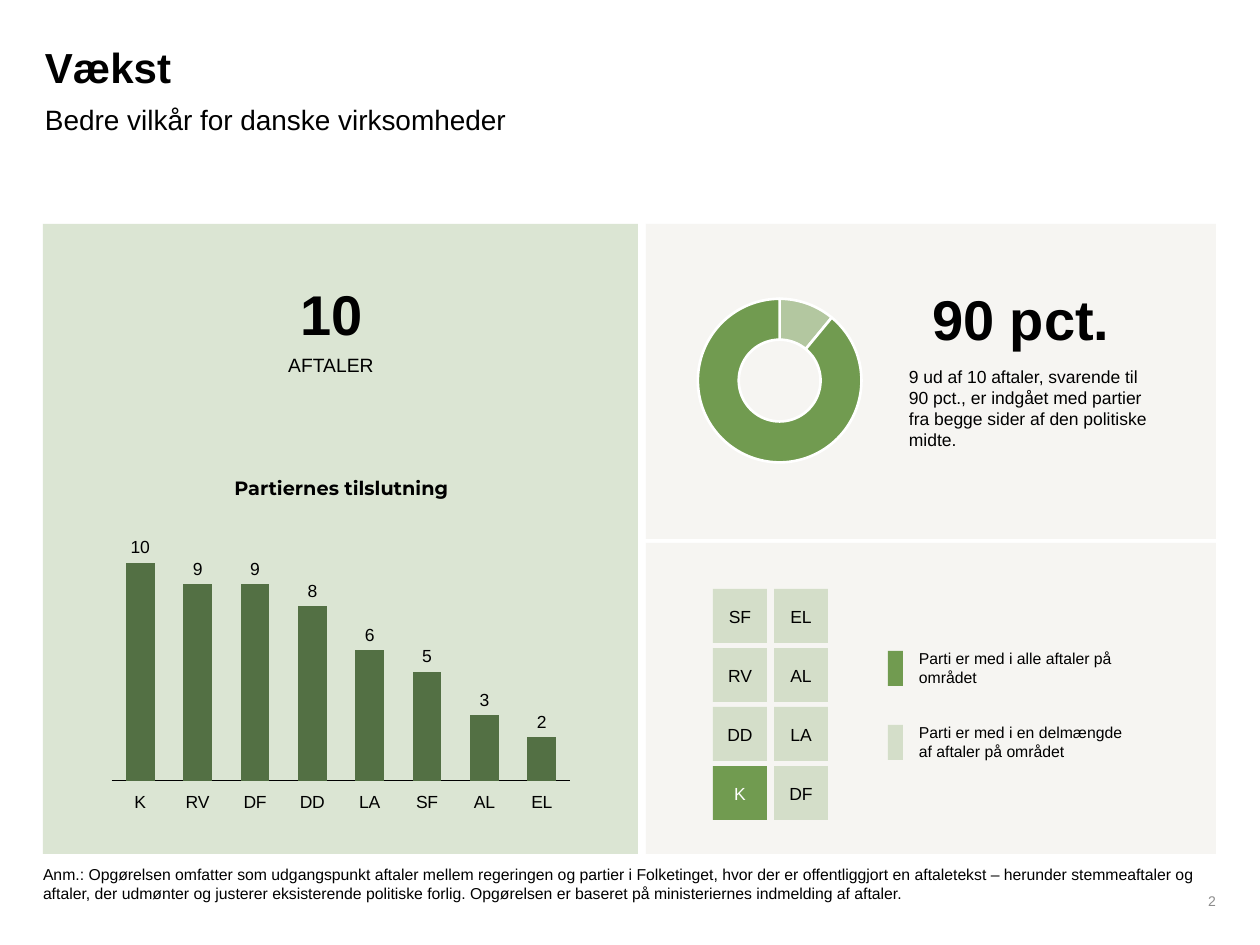
from dataclasses import dataclass
from typing import Optional

from lxml.etree import SubElement
from pptx import Presentation
from pptx.chart.data import CategoryChartData
from pptx.dml.color import RGBColor
from pptx.enum.chart import XL_CHART_TYPE as ChartType, XL_LABEL_POSITION as LabelPosition
from pptx.enum.chart import XL_TICK_LABEL_POSITION as TickLabelPosition, XL_TICK_MARK as TickMark
from pptx.enum.shapes import MSO_SHAPE as ShapeKind
from pptx.enum.text import MSO_ANCHOR as Anchor, PP_ALIGN as Align
from pptx.oxml import parse_xml
from pptx.oxml.ns import nsdecls, qn
from pptx.util import Pt

EMU_PER_PX = 914400 / 126
BLACK, WHITE, GREY = "000000", "FFFFFF", "8C8C8C"
GREEN, DARK_GREEN, SAND = "719B50", "537044", "F6F5F2"
PALE = 25


@dataclass(frozen=True)
class Box:
    left: int
    top: int
    width: int
    height: int

    def emu(self) -> tuple:
        return tuple(round(px * EMU_PER_PX) for px in (self.left, self.top, self.width, self.height))


@dataclass(frozen=True)
class Label:
    box: Box
    lines: tuple
    size: int
    bold: bool = False
    color: str = BLACK
    font: str = "Arial"
    align: Align = Align.LEFT
    anchor: Anchor = Anchor.TOP
    margins: tuple = (0, 0, 0, 0)
    line_spacing: Optional[float] = None


@dataclass(frozen=True)
class Block:
    box: Box
    color: str
    opacity: int = 100


@dataclass(frozen=True)
class Tile:
    party: str
    column: int
    row: int
    in_all: bool = False


def rgb(color: str) -> RGBColor:
    return RGBColor.from_string(color)


def paint(fill, color: str, opacity: int = 100) -> None:
    fill.solid()
    fill.fore_color.rgb = rgb(color)
    if opacity < 100:
        color_element = fill._xPr.find(qn("a:solidFill"))[0]
        SubElement(color_element, qn("a:alpha")).set("val", str(opacity * 1000))


def style_font(font, size: int, color: str = BLACK, name: str = "Arial", bold: bool = False) -> None:
    font.name = name
    font.size = Pt(size)
    font.bold = bold
    font.color.rgb = rgb(color)


def write(shape, label: Label) -> None:
    frame = shape.text_frame
    frame.word_wrap = True
    frame.vertical_anchor = label.anchor
    frame.margin_left, frame.margin_top, frame.margin_right, frame.margin_bottom = (
        round(px * EMU_PER_PX) for px in label.margins
    )
    paragraph = frame.paragraphs[0]
    paragraph.alignment = label.align
    if label.line_spacing:
        paragraph.line_spacing = label.line_spacing
    for index, line in enumerate(label.lines):
        if index:
            paragraph.add_line_break()
        run = paragraph.add_run()
        run.text = line
        style_font(run.font, label.size, label.color, label.font, label.bold)


def draw_label(slide, label: Label) -> None:
    write(slide.shapes.add_textbox(*label.box.emu()), label)


def draw_block(slide, block: Block):
    shape = slide.shapes.add_shape(ShapeKind.RECTANGLE, *block.box.emu())
    shape.shadow.inherit = False
    paint(shape.fill, block.color, block.opacity)
    shape.line.fill.background()
    return shape


def draw_tile(slide, tile: Tile) -> None:
    box = Box(713 + 61 * tile.column, 589 + 59 * tile.row, 54, 54)
    shape = draw_block(slide, Block(box, GREEN, 100 if tile.in_all else PALE))
    color = WHITE if tile.in_all else BLACK
    write(shape, Label(box, (tile.party,), 10, color=color, align=Align.CENTER,
                       anchor=Anchor.MIDDLE, margins=(13, 13, 13, 13)))


def add_chart(slide, kind: ChartType, box: Box, categories: tuple, values: tuple):
    data = CategoryChartData()
    data.categories = categories
    data.add_series("Series 1", values)
    chart = slide.shapes.add_chart(kind, *box.emu(), data).chart
    chart.has_legend = False
    chart.has_title = False
    style_font(chart.font, 10)
    return chart


def draw_share_chart(slide) -> None:
    chart = add_chart(slide, ChartType.DOUGHNUT, Box(683, 260, 186, 239), ("1", "2", "3"), (11, 89, None))
    plot = chart.plots[0]
    plot.has_data_labels = False
    series = plot.series[0]
    for index, opacity in enumerate((50, 100)):
        point = series.points[index].format
        paint(point.fill, GREEN, opacity)
        paint(point.line.fill, WHITE)
        point.line.width = Pt(1.5)
    plot_area = chart._chartSpace.chart.plotArea
    plot_area.find(".//" + qn("c:holeSize")).set("val", "61")
    old_layout = plot_area.find(qn("c:layout"))
    if old_layout is not None:
        plot_area.remove(old_layout)
    settings = {"layoutTarget": "inner", "xMode": "edge", "yMode": "edge",
                "x": 0.08, "y": 0.06, "w": 0.88, "h": 0.89}
    items = "".join(f'<c:{name} val="{value}"/>' for name, value in settings.items())
    plot_area.insert(0, parse_xml(
        f'<c:layout {nsdecls("c")}><c:manualLayout>{items}</c:manualLayout></c:layout>'))


def draw_party_chart(slide) -> None:
    chart = add_chart(slide, ChartType.COLUMN_CLUSTERED, Box(102, 513, 478, 306),
                      ("K", "RV", "DF", "DD", "LA", "SF", "AL", "EL"), (10, 9, 9, 8, 6, 5, 3, 2))
    value_axis = chart.value_axis
    value_axis.visible = False
    value_axis.has_major_gridlines = False
    value_axis.minimum_scale, value_axis.maximum_scale = 0, 12
    category_axis = chart.category_axis
    category_axis.major_tick_mark = TickMark.NONE
    category_axis.tick_label_position = TickLabelPosition.LOW
    style_font(category_axis.tick_labels.font, 10)
    paint(category_axis.format.line.fill, BLACK)
    category_axis.format.line.width = Pt(0.75)
    plot = chart.plots[0]
    plot.gap_width = 100
    plot.vary_by_categories = False
    paint(plot.series[0].format.fill, DARK_GREEN)
    plot.has_data_labels = True
    labels = plot.data_labels
    labels.show_value = True
    labels.position = LabelPosition.OUTSIDE_END
    style_font(labels.font, 10)


BLOCKS = (
    Block(Box(43, 224, 595, 630), GREEN, PALE),
    Block(Box(646, 224, 570, 315), SAND),
    Block(Box(646, 543, 570, 311), SAND),
    Block(Box(888, 651, 15, 35), GREEN),
    Block(Box(888, 725, 15, 35), GREEN, PALE),
)
TILES = (
    Tile("SF", 0, 0), Tile("EL", 1, 0), Tile("RV", 0, 1), Tile("AL", 1, 1),
    Tile("DD", 0, 2), Tile("LA", 1, 2), Tile("K", 0, 3, in_all=True), Tile("DF", 1, 3),
)
LABELS = (
    Label(Box(45, 47, 672, 49), ("Vækst",), 24, bold=True, line_spacing=0.9),
    Label(Box(45, 102, 992, 39), ("Bedre vilkår for danske virksomheder",), 16,
          anchor=Anchor.MIDDLE, line_spacing=0.9),
    Label(Box(256, 280, 151, 68), ("10",), 32, bold=True, align=Align.CENTER),
    Label(Box(238, 353, 186, 24), ("AFTALER",), 11, align=Align.CENTER),
    Label(Box(159, 475, 365, 24), ("Partiernes tilslutning",), 11, bold=True,
          font="Montserrat", align=Align.CENTER, anchor=Anchor.BOTTOM),
    Label(Box(924, 285, 194, 68), ("90 pct.",), 32, bold=True, align=Align.CENTER),
    Label(Box(896, 353, 275, 134),
          ("9 ud af 10 aftaler, svarende til 90 pct., er indgået med partier fra begge sider "
           "af den politiske midte.",), 10, margins=(13, 13, 13, 13)),
    Label(Box(919, 649, 239, 38), ("Parti er med i alle aftaler på området",), 9),
    Label(Box(919, 723, 224, 38), ("Parti er med i en delmængde", "af aftaler på området"), 9),
    Label(Box(43, 859, 1189, 50),
          ("Anm.: Opgørelsen omfatter som udgangspunkt aftaler mellem regeringen og partier i "
           "Folketinget, hvor der er offentliggjort en aftaletekst – herunder stemmeaftaler og "
           "aftaler, der udmønter og justerer eksisterende politiske forlig. Opgørelsen er baseret "
           "på ministeriernes indmelding af aftaler.",), 9, margins=(0, 6, 13, 6)),
    Label(Box(932, 876, 284, 50), ("2",), 8, color=GREY, align=Align.RIGHT, anchor=Anchor.MIDDLE),
)


def main() -> None:
    presentation = Presentation()
    presentation.slide_width = round(1260 * EMU_PER_PX)
    presentation.slide_height = round(945 * EMU_PER_PX)
    slide = presentation.slides.add_slide(presentation.slide_layouts[6])
    for block in BLOCKS:
        draw_block(slide, block)
    draw_share_chart(slide)
    draw_party_chart(slide)
    for tile in TILES:
        draw_tile(slide, tile)
    for label in LABELS:
        draw_label(slide, label)
    presentation.save("out.pptx")


if __name__ == "__main__":
    main()
